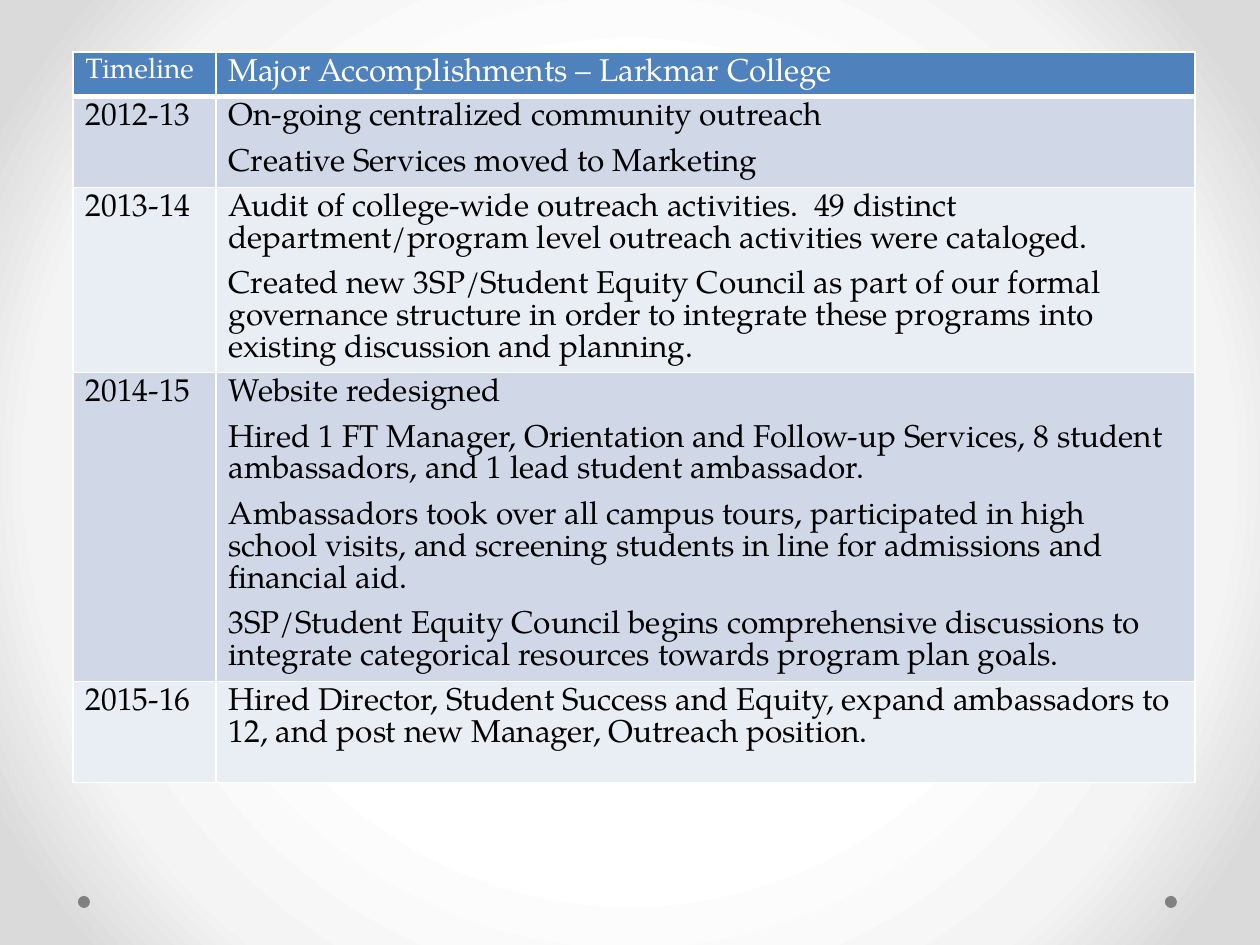
"""Build a slide with a timeline table of yearly college accomplishments."""
from pptx import Presentation
from pptx.dml.color import RGBColor as RGB
from pptx.enum.shapes import MSO_SHAPE as SHAPE
from pptx.oxml import parse_xml
from pptx.oxml.ns import nsdecls
from pptx.util import Emu, Pt

PX = 914400 // 126
THEME = {
    "font": "TeX Gyre Pagella", "label": 16, "body": 18, "gap": 8,
    "header": "4F81BD", "bands": ("D0D8E8", "E9EDF4"),
    "header_text": "FFFFFF", "text": "000000", "border": "FFFFFF", "dot": "808080",
    "bg": ((50, "FFFFFF"), (76, "F4F4F4"), (92, "DADADA")),
}
ROWS = [
    (44, "Timeline", ["Major Accomplishments – Larkmar College"]),
    (91, "2012-13", ["On-going centralized community outreach",
                     "Creative Services moved to Marketing"]),
    (185, "2013-14", [
        "Audit of college-wide outreach activities.  49 distinct department/program level "
        "outreach activities were cataloged.",
        "Created new 3SP/Student Equity Council as part of our formal governance structure "
        "in order to integrate these programs into existing discussion and planning."]),
    (309, "2014-15", [
        "Website redesigned",
        "Hired 1 FT Manager, Orientation and Follow-up Services, 8 student ambassadors, "
        "and 1 lead student ambassador.",
        "Ambassadors took over all campus tours, participated in high school visits, "
        "and screening students in line for admissions and financial aid.",
        "3SP/Student Equity Council begins comprehensive discussions to integrate "
        "categorical resources towards program plan goals."]),
    (101, "2015-16", [
        "Hired Director, Student Success and Equity, expand ambassadors to 12, "
        "and post new Manager, Outreach position."]),
]
COLS = (143, 979)


def px(*values):
    return [Emu(v * PX) for v in values]


def set_borders(cell, widths):
    tcPr = cell._tc.get_or_add_tcPr()
    for i, (side, width) in enumerate(widths.items()):
        tcPr.insert(i, parse_xml(
            f'<a:ln{side} {nsdecls("a")} w="{Pt(width)}"><a:solidFill>'
            f'<a:srgbClr val="{THEME["border"]}"/></a:solidFill></a:ln{side}>'))


prs = Presentation()
prs.slide_width, prs.slide_height = px(1260, 945)
s = prs.slides.add_slide(prs.slide_layouts[6])

stops = "".join(f'<a:gs pos="{pos * 1000}"><a:srgbClr val="{color}"/></a:gs>'
                for pos, color in THEME["bg"])
s.background.fill.solid()
bgPr = s.background._cSld.bg.bgPr
bgPr.replace(bgPr[0], parse_xml(
    f'<a:gradFill {nsdecls("a")} rotWithShape="1"><a:gsLst>{stops}</a:gsLst>'
    '<a:path path="circle"><a:fillToRect l="50000" t="50000" r="50000" b="50000"/>'
    '</a:path></a:gradFill>'))

for left in (1165, 78):
    sp = s.shapes.add_shape(SHAPE.OVAL, *px(left, 896, 12, 12))
    sp.shadow.inherit = False
    sp.fill.solid()
    sp.fill.fore_color.rgb = RGB.from_string(THEME["dot"])
    sp.line.fill.background()

height = sum(row[0] for row in ROWS)
table = s.shapes.add_table(len(ROWS), len(COLS), *px(73, 52, sum(COLS), height)).table
for col, width in zip(table.columns, px(*COLS)):
    col.width = width

for i, (row_height, label, items) in enumerate(ROWS):
    table.rows[i].height = Emu(row_height * PX)
    fill = THEME["bands"][(i - 1) % 2] if i else THEME["header"]
    color = THEME["text"] if i else THEME["header_text"]
    for j, lines in enumerate(([label], items)):
        cell = table.cell(i, j)
        cell.fill.solid()
        cell.fill.fore_color.rgb = RGB.from_string(fill)
        set_borders(cell, {"L": 1, "R": 1, "T": 1, "B": 1 if i else 3})
        size = THEME["body"] if i or j else THEME["label"]
        fmt = {"name": THEME["font"], "size": Pt(size), "bold": False}
        tf = cell.text_frame
        for n, line in enumerate(lines):
            p = tf.add_paragraph() if n else tf.paragraphs[0]
            if n:
                p.space_before = Pt(THEME["gap"])
            r = p.add_run()
            r.text = line
            for key, value in fmt.items():
                setattr(r.font, key, value)
            r.font.color.rgb = RGB.from_string(color)

prs.save("out.pptx")
